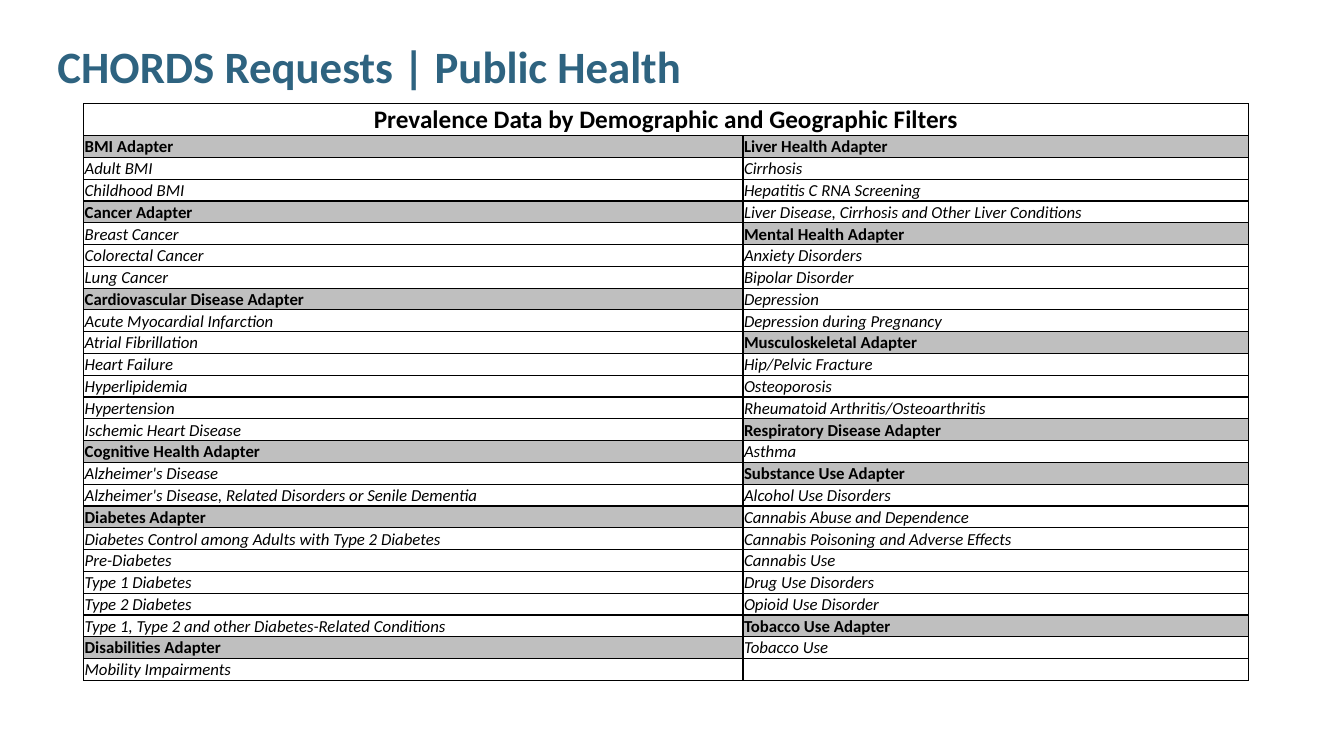
from lxml.etree import SubElement
from pptx import Presentation
from pptx.dml.color import RGBColor
from pptx.enum.text import MSO_ANCHOR as Anchor, PP_ALIGN as Align
from pptx.oxml import parse_xml
from pptx.oxml.ns import nsdecls, qn
from pptx.util import Inches, Pt

BLUE = RGBColor(0x2E, 0x63, 0x80)
BLACK = RGBColor(0, 0, 0)
GRAY = RGBColor(0xBF, 0xBF, 0xBF)
FONT = "Calibri"

TITLE = "CHORDS Requests | Public Health"
HEAD = "Prevalence Data by Demographic and Geographic Filters"
LEFT = {
    "BMI Adapter": ["Adult BMI", "Childhood BMI"],
    "Cancer Adapter": ["Breast Cancer", "Colorectal Cancer", "Lung Cancer"],
    "Cardiovascular Disease Adapter": [
        "Acute Myocardial Infarction", "Atrial Fibrillation", "Heart Failure",
        "Hyperlipidemia", "Hypertension", "Ischemic Heart Disease"],
    "Cognitive Health Adapter": [
        "Alzheimer's Disease",
        "Alzheimer's Disease, Related Disorders or Senile Dementia"],
    "Diabetes Adapter": [
        "Diabetes Control among Adults with Type 2 Diabetes", "Pre-Diabetes",
        "Type 1 Diabetes", "Type 2 Diabetes",
        "Type 1, Type 2 and other Diabetes-Related Conditions"],
    "Disabilities Adapter": ["Mobility Impairments"],
}
RIGHT = {
    "Liver Health Adapter": [
        "Cirrhosis", "Hepatitis C RNA Screening",
        "Liver Disease, Cirrhosis and Other Liver Conditions"],
    "Mental Health Adapter": [
        "Anxiety Disorders", "Bipolar Disorder", "Depression",
        "Depression during Pregnancy"],
    "Musculoskeletal Adapter": [
        "Hip/Pelvic Fracture", "Osteoporosis",
        "Rheumatoid Arthritis/Osteoarthritis"],
    "Respiratory Disease Adapter": ["Asthma"],
    "Substance Use Adapter": [
        "Alcohol Use Disorders", "Cannabis Abuse and Dependence",
        "Cannabis Poisoning and Adverse Effects", "Cannabis Use",
        "Drug Use Disorders", "Opioid Use Disorder"],
    "Tobacco Use Adapter": ["Tobacco Use"],
}
WIDTHS = [6.54, 5.01]
TOP, HIGH, FIRST = 1.03, 5.72, 0.31


def write(frame, text, size=12, color=BLACK, bold=False, italic=False,
          align=Align.LEFT):
    para = frame.paragraphs[0]
    para.alignment = align
    if not text:
        SubElement(para._p, qn("a:endParaRPr"), sz=str(size * 100))
        return para
    run = para.add_run()
    run.text = text
    font = run.font
    font.name, font.size, font.color.rgb = FONT, Pt(size), color
    font.bold, font.italic = bold, italic
    return para


def style(cell, fill=None):
    cell.vertical_anchor = Anchor.BOTTOM
    cell.margin_left = cell.margin_right = cell.margin_top = Inches(0.01)
    cell.margin_bottom = 0
    if fill is None:
        cell.fill.background()
    else:
        cell.fill.solid()
        cell.fill.fore_color.rgb = fill
    props = cell._tc.get_or_add_tcPr()
    for spot, side in enumerate("LRTB"):
        props.insert(spot, parse_xml(
            f'<a:ln{side} {nsdecls("a")} w="{Pt(1)}"><a:solidFill>'
            f'<a:srgbClr val="{BLACK}"/></a:solidFill></a:ln{side}>'))


def flatten(groups):
    rows = []
    for name, items in groups.items():
        rows.append((name, True))
        rows += [(item, False) for item in items]
    return rows


def main():
    deck = Presentation()
    deck.slide_width, deck.slide_height = Inches(13.33), Inches(7.5)
    slide = deck.slides.add_slide(deck.slide_layouts[5])

    title = slide.shapes.title
    title.left, title.top = Inches(0.47), Inches(0.31)
    title.width, title.height = Inches(12.29), Inches(0.75)
    title.text_frame.vertical_anchor = Anchor.MIDDLE
    para = write(title.text_frame, TITLE, size=32, color=BLUE, bold=True)
    para.line_spacing = 0.9

    lists = [flatten(LEFT), flatten(RIGHT)]
    count = max(map(len, lists))
    table = slide.shapes.add_table(
        count + 1, 2, Inches(0.83), Inches(TOP),
        Inches(sum(WIDTHS)), Inches(HIGH)).table
    table.first_row = table.horz_banding = False
    for col, width in zip(table.columns, WIDTHS):
        col.width = Inches(width)
    for num, row in enumerate(table.rows):
        row.height = Inches((HIGH - FIRST) / count if num else FIRST)

    table.cell(0, 0).merge(table.cell(0, 1))
    write(table.cell(0, 0).text_frame, HEAD, size=18, bold=True,
          align=Align.CENTER)
    for col, rows in enumerate(lists):
        style(table.cell(0, col))
        rows += [("", False)] * (count - len(rows))
        for num, (text, head) in enumerate(rows, 1):
            cell = table.cell(num, col)
            style(cell, GRAY if head else None)
            write(cell.text_frame, text, bold=head, italic=not head)

    deck.save("out.pptx")


if __name__ == "__main__":
    main()
